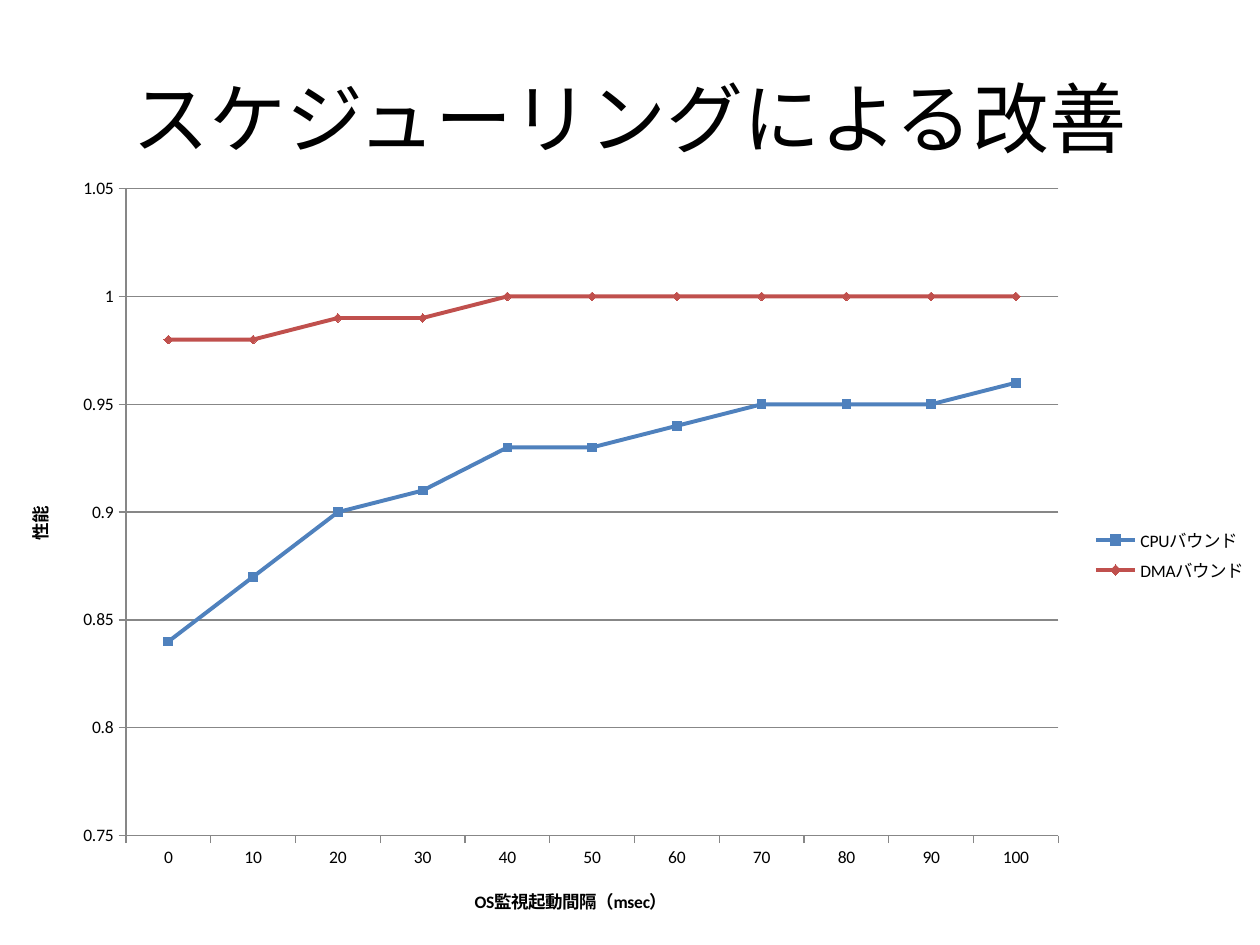
from dataclasses import dataclass

from lxml.etree import SubElement
from pptx import Presentation
from pptx.chart.data import CategoryChartData
from pptx.dml.color import RGBColor
from pptx.enum.chart import (XL_CHART_TYPE, XL_LEGEND_POSITION,
                             XL_MARKER_STYLE, XL_TICK_MARK)
from pptx.enum.text import MSO_ANCHOR, PP_ALIGN
from pptx.oxml.ns import qn
from pptx.util import Cm, Pt


@dataclass(frozen=True)
class Theme:
    face: str = "Calibri"
    ink: RGBColor = RGBColor(0, 0, 0)
    rule: RGBColor = RGBColor(0x87, 0x87, 0x87)
    blue: RGBColor = RGBColor(0x4F, 0x81, 0xBD)
    red: RGBColor = RGBColor(0xC0, 0x50, 0x4D)
    head: Pt = Pt(44)
    body: Pt = Pt(10)
    thin: Pt = Pt(0.75)
    thick: Pt = Pt(2.25)


THEME = Theme()

SERIES = [
    ("CPUバウンド", THEME.blue, XL_MARKER_STYLE.SQUARE,
     (0.84, 0.87, 0.9, 0.91, 0.93, 0.93, 0.94, 0.95, 0.95, 0.95, 0.96)),
    ("DMAバウンド", THEME.red, XL_MARKER_STYLE.DIAMOND,
     (0.98, 0.98, 0.99, 0.99, 1, 1, 1, 1, 1, 1, 1)),
]


def style(item, form):
    for name, value in form.items():
        setattr(item, name, value)


def set_font(font, size, bold=False):
    style(font, {"name": THEME.face, "size": size, "bold": bold})
    font.color.rgb = THEME.ink


def set_line(line, color, width):
    line.color.rgb = color
    line.width = width


def add_title(slide, text):
    frame = slide.shapes.add_textbox(
        Cm(1.27), Cm(0.76), Cm(22.86), Cm(3.18)).text_frame
    style(frame, {"word_wrap": True, "vertical_anchor": MSO_ANCHOR.MIDDLE})
    para = frame.paragraphs[0]
    para.alignment = PP_ALIGN.CENTER
    run = para.add_run()
    run.text = text
    set_font(run.font, THEME.head)


def set_axis(axis, title, form):
    style(axis, form)
    axis.major_tick_mark = XL_TICK_MARK.OUTSIDE
    set_line(axis.format.line, THEME.rule, THEME.thin)
    set_font(axis.tick_labels.font, THEME.body)
    run = axis.axis_title.text_frame.paragraphs[0].add_run()
    run.text = title
    set_font(run.font, THEME.body, True)


def place_plot(chart, box):
    """Fix the inner plot area as fractions of the chart frame."""
    area = chart.plots[0]._element.getparent()
    layout = area.find(qn("c:layout"))
    if layout is None:
        layout = SubElement(area, qn("c:layout"))
        area.insert(0, layout)
    manual = SubElement(layout, qn("c:manualLayout"))
    rules = {"layoutTarget": "inner", "xMode": "edge", "yMode": "edge", **box}
    for name, value in rules.items():
        SubElement(manual, qn(f"c:{name}")).set("val", str(value))


def add_lines(slide):
    data = CategoryChartData()
    data.categories = [str(step) for step in range(0, 101, 10)]
    for name, _, _, vals in SERIES:
        data.add_series(name, vals)
    chart = slide.shapes.add_chart(
        XL_CHART_TYPE.LINE_MARKERS, Cm(0), Cm(3.33), Cm(25.4), Cm(15.72),
        data).chart
    set_font(chart.font, THEME.body)
    style(chart, {"has_title": False, "has_legend": True})
    style(chart.legend, {"position": XL_LEGEND_POSITION.RIGHT,
                         "include_in_layout": False})
    set_font(chart.legend.font, THEME.body)
    chart.plots[0].vary_by_categories = False

    set_axis(chart.category_axis, "OS監視起動間隔（msec）",
             {"has_major_gridlines": False})
    axis = chart.value_axis
    set_axis(axis, "性能", {"minimum_scale": 0.75, "maximum_scale": 1.05,
                          "major_unit": 0.05, "has_major_gridlines": True})
    style(axis.tick_labels, {"number_format": "General",
                             "number_format_is_linked": False})
    set_line(axis.major_gridlines.format.line, THEME.rule, THEME.thin)

    for line, (_, color, mark, _) in zip(chart.plots[0].series, SERIES):
        line.smooth = False
        set_line(line.format.line, color, THEME.thick)
        style(line.marker, {"style": mark, "size": 5})
        fill = line.marker.format.fill
        fill.solid()
        fill.fore_color.rgb = color
        set_line(line.marker.format.line, color, THEME.thin)
    place_plot(chart, {"x": 0.1, "y": 0.03, "w": 0.74, "h": 0.83})


def main():
    deck = Presentation()
    style(deck, {"slide_width": Cm(25.4), "slide_height": Cm(19.05)})
    slide = deck.slides.add_slide(deck.slide_layouts[6])
    add_title(slide, "スケジューリングによる改善")
    add_lines(slide)
    deck.save("out.pptx")


if __name__ == "__main__":
    main()
